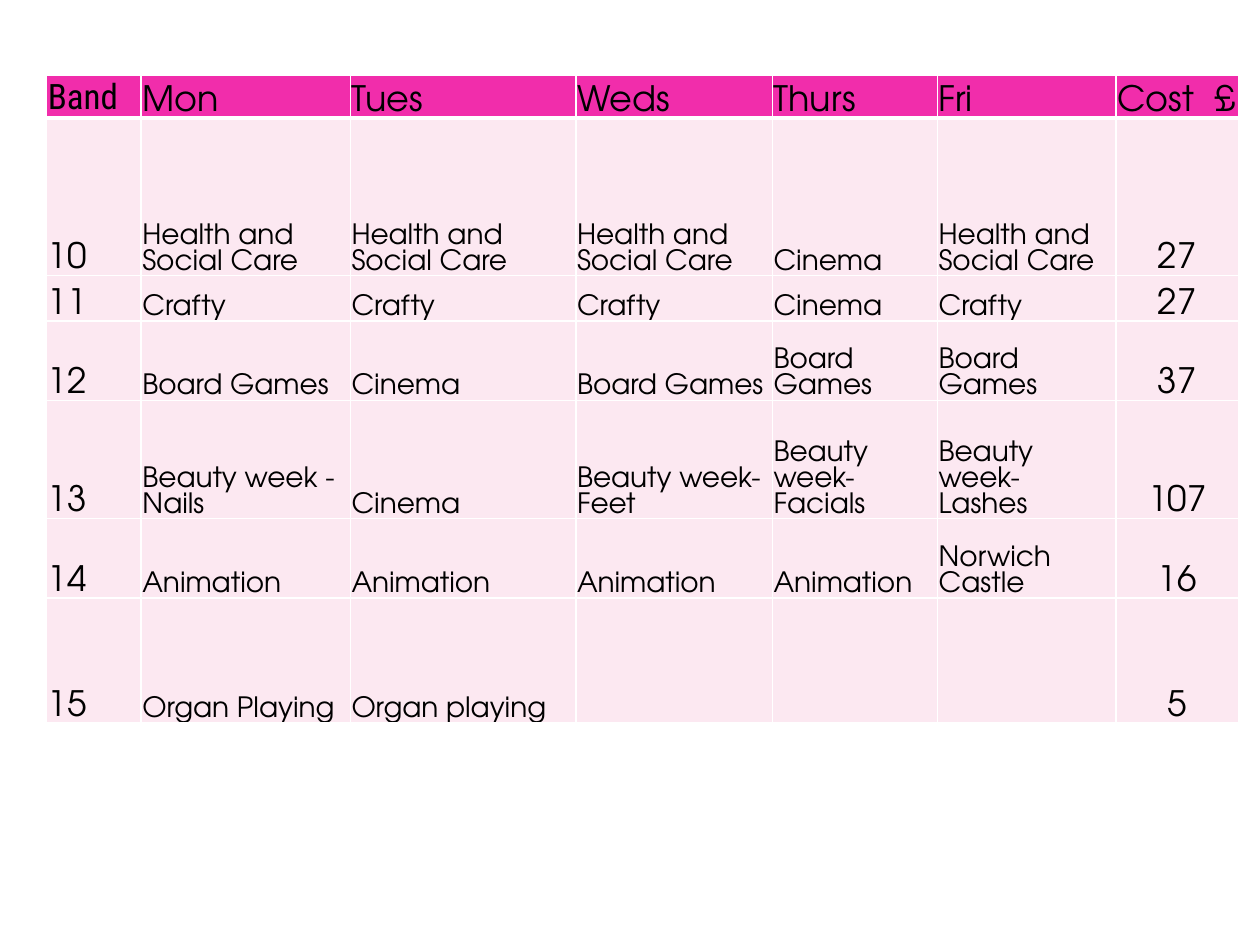
from lxml.etree import SubElement
from pptx import Presentation
from pptx.dml.color import RGBColor
from pptx.enum.text import MSO_ANCHOR, PP_ALIGN
from pptx.oxml.ns import qn
from pptx.util import Inches, Pt

COLORS = {"head": "F12DAB", "body": "FCE8F1", "line": "FFFFFF", "text": "000000"}
FONT = "TeX Gyre Adventor"
HEAD_FONT = "Roboto Condensed"

WIDTHS = [0.75, 1.66, 1.79, 1.56, 1.31, 1.42, 0.97]
HEIGHTS = [0.32, 1.25, 0.36, 0.63, 0.94, 0.63, 0.99]
CARE = "Health and Social Care"
ROWS = [
    ["Band", "Mon", "Tues", "Weds", "Thurs", "Fri", "Cost  £"],
    ["10", CARE, CARE, CARE, "Cinema", CARE, "27"],
    ["11", "Crafty", "Crafty", "Crafty", "Cinema", "Crafty", "27"],
    ["12", "Board Games", "Cinema", "Board Games", "Board Games", "Board Games", "37"],
    ["13", "Beauty week - Nails", "Cinema", "Beauty week- Feet",
     "Beauty week- Facials", "Beauty week- Lashes", "107"],
    ["14", "Animation", "Animation", "Animation", "Animation", "Norwich Castle", "16"],
    ["15", "Organ Playing", "Organ playing", "", "", "", "5"],
]


def write(frame, text, size=16, font=FONT, color="text", align=PP_ALIGN.LEFT):
    para = frame.paragraphs[0]
    para.alignment = align
    para.font.size = Pt(size)
    if text:
        run = para.add_run()
        run.text = text
        run.font.name = font
        run.font.size = Pt(size)
        run.font.color.rgb = RGBColor.from_string(COLORS[color])


class Board:
    def __init__(self, deck):
        self.slide = deck.slides.add_slide(deck.slide_layouts[6])

    def border(self, cell, **sides):
        props = cell._tc.get_or_add_tcPr()
        for side in "LRTB":
            width = sides.get(side, 1)
            line = SubElement(props, qn(f"a:ln{side}"), w=str(Pt(width)))
            fill = SubElement(line, qn("a:solidFill"))
            SubElement(fill, qn("a:srgbClr"), val=COLORS["line"])

    def cell(self, cell, text, row, col):
        head, last = row == 0, col == len(WIDTHS) - 1
        # Thick rule between header and body
        self.border(cell, B=3 if head else 1, T=3 if row == 1 else 1)
        cell.fill.solid()
        cell.fill.fore_color.rgb = RGBColor.from_string(COLORS["head" if head else "body"])
        cell.vertical_anchor = MSO_ANCHOR.BOTTOM
        cell.margin_left = cell.margin_right = cell.margin_top = Inches(0.01)
        cell.margin_bottom = 0
        write(
            cell.text_frame, text,
            size=20 if head or last or col == 0 else 16,
            font=HEAD_FONT if head and col == 0 else FONT,
            align=PP_ALIGN.CENTER if last and not head else PP_ALIGN.LEFT,
        )

    def table(self, left, top, rows):
        frame = self.slide.shapes.add_table(
            len(rows), len(WIDTHS), Inches(left), Inches(top),
            Inches(sum(WIDTHS)), Inches(sum(HEIGHTS)))
        grid = frame.table
        for col, width in zip(grid.columns, WIDTHS):
            col.width = Inches(width)
        for row, height in zip(grid.rows, HEIGHTS):
            row.height = Inches(height)
        for i, row in enumerate(rows):
            for j, text in enumerate(row):
                self.cell(grid.cell(i, j), text, i, j)


def main():
    deck = Presentation()
    deck.slide_width, deck.slide_height = Inches(10), Inches(7.5)
    # Weekly timetable with costs
    Board(deck).table(0.37, 0.6, ROWS)
    deck.save("out.pptx")


if __name__ == "__main__":
    main()
